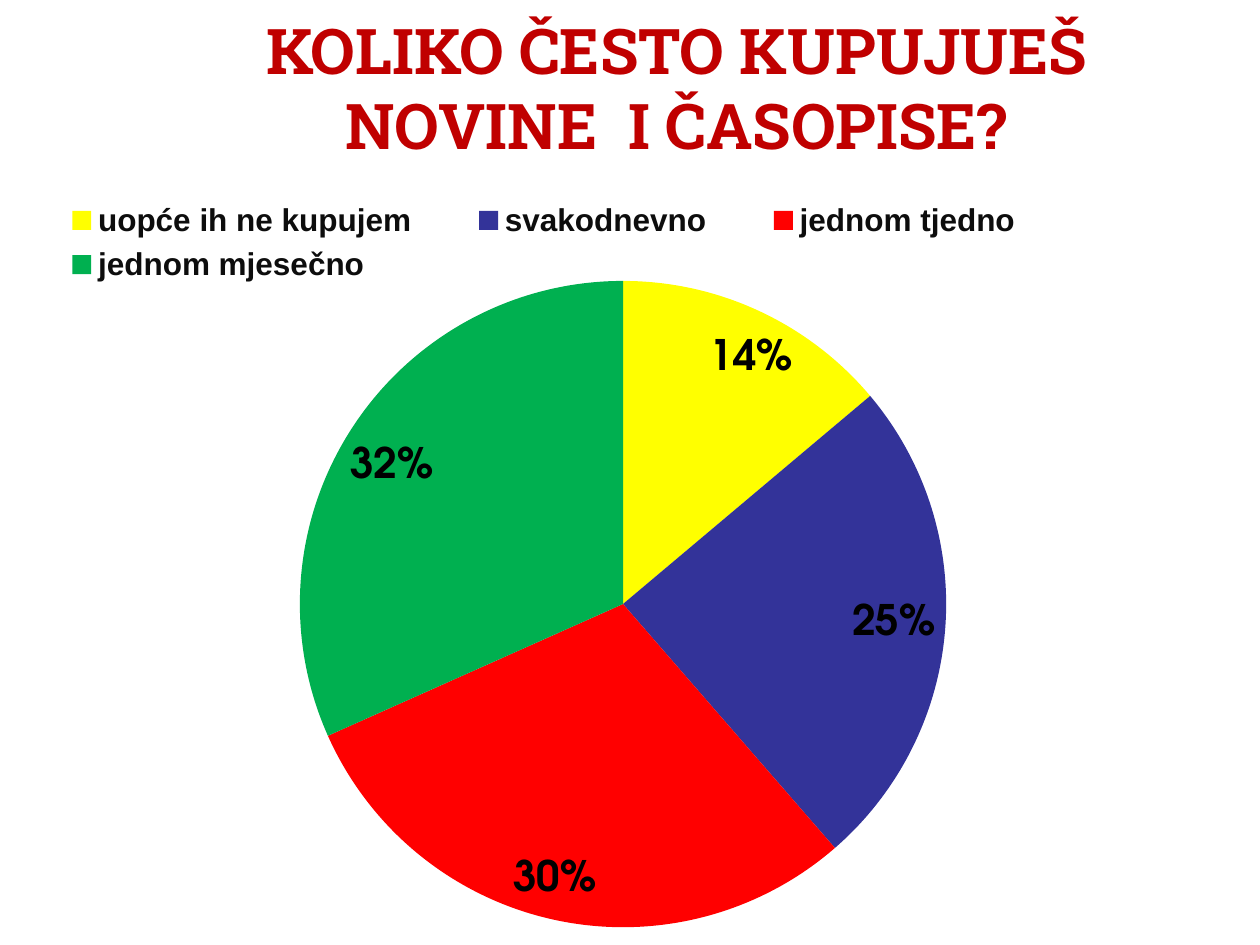
from lxml import etree
from pptx import Presentation
from pptx.chart.data import CategoryChartData
from pptx.dml.color import RGBColor
from pptx.enum.chart import XL_CHART_TYPE, XL_LABEL_POSITION, XL_LEGEND_POSITION
from pptx.enum.text import MSO_ANCHOR, MSO_AUTO_SIZE, PP_ALIGN
from pptx.oxml.ns import qn
from pptx.util import Inches, Pt

PIE = XL_CHART_TYPE.PIE
BEST_FIT = XL_LABEL_POSITION.BEST_FIT
TOP = XL_LEGEND_POSITION.TOP
MIDDLE = MSO_ANCHOR.MIDDLE
NO_FIT = MSO_AUTO_SIZE.NONE
CENTER = PP_ALIGN.CENTER

CRIMSON = RGBColor(0xC0, 0x00, 0x00)
BLACK = RGBColor(0x00, 0x00, 0x00)
INK = RGBColor(0x0D, 0x0D, 0x0D)
YELLOW = RGBColor(0xFF, 0xFF, 0x00)
INDIGO = RGBColor(0x33, 0x33, 0x99)
RED = RGBColor(0xFF, 0x00, 0x00)
GREEN = RGBColor(0x00, 0xB0, 0x50)

CHART_WIDTH, CHART_HEIGHT = 9.65, 6.11
ANSWERS = [
    ("uopće ih ne kupujem", 14, YELLOW),
    ("svakodnevno", 25, INDIGO),
    ("jednom tjedno", 30, RED),
    ("jednom mjesečno", 32, GREEN),
]


def style_font(font, name, size, color, bold=False):
    font.name = name
    font.size = Pt(size)
    font.bold = bold
    font.color.rgb = color


def write(para, text, **style):
    span = para.add_run()
    span.text = text
    style_font(span.font, **style)


def place_in_chart(part, left, top, width, height, inner=False):
    layout = part.find(qn("c:layout"))
    if layout is None:
        layout = etree.Element(qn("c:layout"))
        entry = part.find(qn("c:legendPos"))
        if entry is None:
            part.insert(0, layout)
        else:
            entry.addnext(layout)
    manual = etree.SubElement(layout, qn("c:manualLayout"))
    values = [("layoutTarget", "inner")] if inner else []
    values += [("xMode", "edge"), ("yMode", "edge")]
    values += [("x", left / CHART_WIDTH), ("y", top / CHART_HEIGHT)]
    values += [("w", width / CHART_WIDTH), ("h", height / CHART_HEIGHT)]
    for tag, value in values:
        etree.SubElement(manual, qn(f"c:{tag}")).set("val", str(value))


class SurveySlide:
    """Holds the fonts and the current page of the survey."""

    heading_font = "Roboto Slab"
    label_font = "TeX Gyre Adventor"
    legend_font = "Arial"

    def __init__(self, deck):
        self.page = deck.slides.add_slide(deck.slide_layouts[5])

    def title(self, text, left, top, width, height):
        box = self.page.shapes.title
        box.left, box.top = Inches(left), Inches(top)
        box.width, box.height = Inches(width), Inches(height)
        frame = box.text_frame
        frame.word_wrap = True
        frame.auto_size = NO_FIT
        frame.vertical_anchor = MIDDLE
        para = frame.paragraphs[0]
        para.alignment = CENTER
        write(para, text, name=self.heading_font, size=36, color=CRIMSON, bold=True)

    def pie(self, answers, left, top):
        data = CategoryChartData()
        data.categories = [name for name, _, _ in answers]
        data.add_series("Series 1", [share for _, share, _ in answers])
        chart = self.page.shapes.add_chart(
            PIE, Inches(left), Inches(top), Inches(CHART_WIDTH), Inches(CHART_HEIGHT), data
        ).chart
        chart.has_title = False
        style_font(chart.font, self.label_font, 18, BLACK)
        self.legend(chart)

        plot = chart.plots[0]
        plot.vary_by_categories = True
        for index, (_, _, color) in enumerate(answers):
            fill = plot.series[0].points[index].format.fill
            fill.solid()
            fill.fore_color.rgb = color
        plot.has_data_labels = True
        labels = plot.data_labels
        labels.show_percentage = True
        labels.show_value = False
        labels.number_format = "0%"
        labels.number_format_is_linked = False
        labels.position = BEST_FIT
        style_font(labels.font, self.label_font, 24, BLACK, bold=True)

        plot_area = chart.element.find(f".//{qn('c:plotArea')}")
        place_in_chart(plot_area, 2.26, 0.84, 5.13, 5.13, inner=True)

    def legend(self, chart):
        chart.has_legend = True
        legend = chart.legend
        legend.position = TOP
        legend.include_in_layout = False
        style_font(legend.font, self.legend_font, 18, INK, bold=True)
        place_in_chart(chart.element.find(f".//{qn('c:legend')}"), 0, 0.15, 8.39, 0.77)


def main():
    deck = Presentation()
    deck.slide_width, deck.slide_height = Inches(10), Inches(7.5)
    survey = SurveySlide(deck)
    survey.title("KOLIKO ČESTO KUPUJUEŠ NOVINE  I ČASOPISE?", 1.38, 0.29, 7.98, 0.8)
    survey.pie(ANSWERS, 0.12, 1.39)
    deck.save("out.pptx")


if __name__ == "__main__":
    main()
